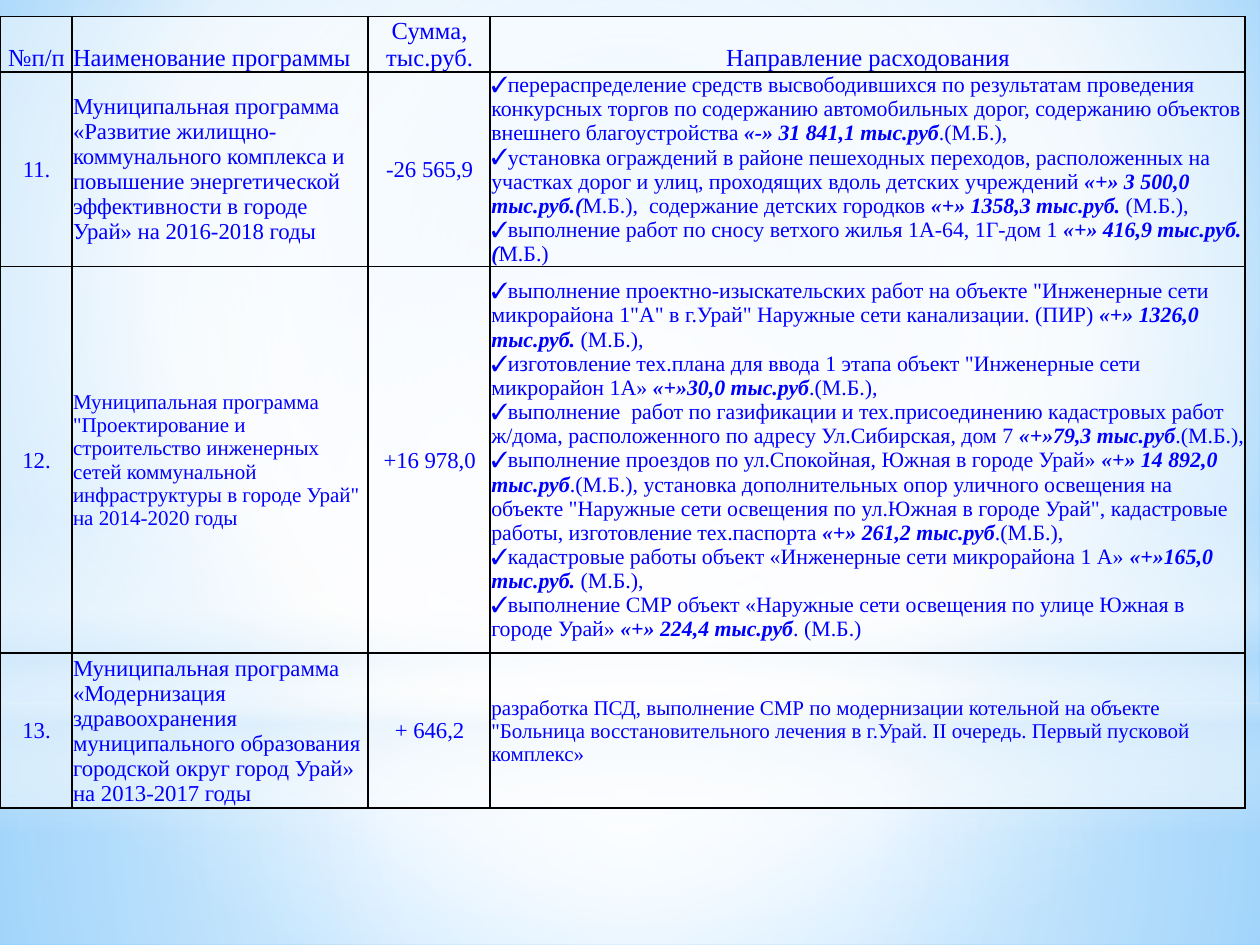
from pptx import Presentation
from pptx.dml.color import RGBColor
from pptx.enum.shapes import MSO_SHAPE as SHAPE
from pptx.enum.text import MSO_ANCHOR as ANCHOR, PP_ALIGN as ALIGN
from pptx.oxml import parse_xml
from pptx.oxml.ns import nsdecls, qn
from pptx.util import Inches, Pt

FONT, BLUE, BLACK, WHITE, SKY = "Times New Roman", "0000FF", "000000", "FFFFFF", "B4DCFA"
COLS = [0.57, 2.35, 0.97, 5.99]
ROWS = [0.44, 1.54, 3.07, 1.23]
HEADERS = ["№п/п", "Наименование программы", "Сумма, тыс.руб.", "Направление расходования"]

# number, name, name size, sum, directions (** marks bold italic), directions size, bulleted
PROGRAMS = [
    ("11.",
     "Муниципальная программа «Развитие жилищно-коммунального комплекса и повышение "
     "энергетической эффективности в городе Урай» на 2016-2018 годы", 13,
     "-26 565,9",
     ["перераспределение средств высвободившихся по результатам проведения конкурсных торгов "
      "по содержанию автомобильных дорог, содержанию объектов внешнего благоустройства "
      "**«-» 31 841,1 тыс.руб**.(М.Б.),",
      "установка ограждений в районе пешеходных переходов, расположенных на участках дорог "
      "и улиц, проходящих вдоль детских учреждений **«+» 3 500,0 тыс.руб.(**М.Б.),  "
      "содержание детских городков **«+» 1358,3 тыс.руб.** (М.Б.),",
      "выполнение работ по сносу ветхого жилья 1А-64, 1Г-дом 1 "
      "**«+» 416,9 тыс.руб.(**М.Б.)"], 12.5, True),
    ("12.",
     'Муниципальная программа "Проектирование и строительство инженерных сетей '
     'коммунальной инфраструктуры в городе Урай" на 2014-2020 годы', 12,
     "+16 978,0",
     ['выполнение проектно-изыскательских работ на объекте "Инженерные сети микрорайона '
      '1"А" в г.Урай" Наружные сети канализации. (ПИР) **«+» 1326,0 тыс.руб.** (М.Б.),',
      'изготовление тех.плана для ввода 1 этапа объект "Инженерные сети микрорайон 1А» '
      '**«+»30,0 тыс.руб**.(М.Б.),',
      "выполнение  работ по газификации и тех.присоединению кадастровых работ ж/дома, "
      "расположенного по адресу Ул.Сибирская, дом 7 **«+»79,3 тыс.руб**.(М.Б.),",
      "выполнение проездов по ул.Спокойная, Южная в городе Урай» **«+» 14 892,0 тыс.руб**"
      ".(М.Б.), установка дополнительных опор уличного освещения на объекте "
      '"Наружные сети освещения по ул.Южная в городе Урай", кадастровые работы, '
      "изготовление тех.паспорта **«+» 261,2 тыс.руб**.(М.Б.),",
      "кадастровые работы объект «Инженерные сети микрорайона 1 А» "
      "**«+»165,0 тыс.руб. **(М.Б.),",
      "выполнение СМР объект «Наружные сети освещения по улице Южная в городе Урай» "
      "**«+» 224,4 тыс.руб**. (М.Б.)"], 12.5, True),
    ("13.",
     "Муниципальная программа «Модернизация здравоохранения муниципального образования "
     "городской округ город Урай» на 2013-2017 годы", 13,
     "+ 646,2",
     ["разработка ПСД, выполнение СМР по модернизации котельной на объекте "
      '"Больница восстановительного лечения в г.Урай. II очередь. Первый пусковой комплекс»'],
     12, False),
]


def color_xml(color, alpha=100):
    return f'<a:srgbClr val="{color}"><a:alpha val="{alpha * 1000}"/></a:srgbClr>'


def set_gradient(props, stops, center=None):
    """Swap the solid fill in props for a radial gradient, or a vertical one without center."""
    gs = "".join(f'<a:gs pos="{pos * 1000}">{color_xml(*color)}</a:gs>' for pos, *color in stops)
    if center:
        rect = " ".join(f'{side}="{v * 1000}"' for side, v in zip("ltrb", center))
        way = f'<a:path path="circle"><a:fillToRect {rect}/></a:path>'
    else:
        way = '<a:lin ang="5400000" scaled="0"/>'
    grad = parse_xml(f'<a:gradFill {nsdecls("a")} rotWithShape="1">'
                     f'<a:gsLst>{gs}</a:gsLst>{way}</a:gradFill>')
    props.replace(props.find(qn("a:solidFill")), grad)


def add_glow(s, kind, box, stops, center=None):
    sp = s.shapes.add_shape(kind, *map(Inches, box))
    sp.shadow.inherit = False
    sp.line.fill.background()
    sp.fill.solid()
    set_gradient(sp.element.spPr, stops, center)


def add_backdrop(s, width, height):
    s.background.fill.solid()
    set_gradient(s.element.xpath(".//p:bgPr")[0],
                 [(0, "9ED5FF"), (60, WHITE), (100, "5BB9FF")], (20, 10, 20, 60))
    split, middle = 5.58, (50, 50, 50, 50)
    add_glow(s, SHAPE.RECTANGLE, (0, split, width, height - split),
             [(0, WHITE, 91), (37, WHITE, 76), (100, SKY, 79)], middle)
    add_glow(s, SHAPE.RECTANGLE, (0, 0, width, split),
             [(0, WHITE, 89), (48, WHITE, 62), (100, SKY, 79)], middle)
    add_glow(s, SHAPE.RECTANGLE, (0, 4.12, width, 2.5),
             [(0, WHITE, 0), (29, WHITE, 30), (45, SKY, 40), (55, WHITE, 26),
              (65, SKY, 60), (100, WHITE, 0)])
    add_glow(s, SHAPE.OVAL, (0, 1.75, width, split), [(0, WHITE), (56, WHITE, 0)], middle)


def style_cell(cell, anchor):
    cell.vertical_anchor = anchor
    cell.margin_left = cell.margin_top = Inches(0.01)
    cell.margin_right = cell.margin_bottom = 0
    tcPr = cell._tc.get_or_add_tcPr()
    for side in "LRTB":
        tcPr.append(parse_xml(f'<a:ln{side} {nsdecls("a")} w="{Pt(1)}"><a:solidFill>'
                              f'{color_xml(BLACK)}</a:solidFill></a:ln{side}>'))
    tcPr.append(parse_xml(f'<a:solidFill {nsdecls("a")}>{color_xml(WHITE, 46)}</a:solidFill>'))


def add_check_bullet(p):
    pPr = p._p.get_or_add_pPr()
    pPr.set("marL", "0")
    pPr.set("indent", "0")
    pPr.append(parse_xml(f'<a:buFont {nsdecls("a")} typeface="{FONT}"/>'))
    pPr.append(parse_xml(f'<a:buChar {nsdecls("a")} char="✓"/>'))


def write_cell(cell, texts, size, align=ALIGN.LEFT, anchor=ANCHOR.MIDDLE, bulleted=False):
    style_cell(cell, anchor)
    tf = cell.text_frame
    for i, text in enumerate(texts):
        p = tf.add_paragraph() if i else tf.paragraphs[0]
        p.alignment = align
        if bulleted:
            add_check_bullet(p)
        for k, part in enumerate(text.split("**")):
            if part:
                r = p.add_run()
                r.text = part
                r.font.name, r.font.size = FONT, Pt(size)
                r.font.color.rgb = RGBColor.from_string(BLUE)
                r.font.bold = r.font.italic = k % 2 == 1


def add_program_table(s, left, top):
    frame = s.shapes.add_table(len(ROWS), len(COLS), Inches(left), Inches(top),
                               Inches(sum(COLS)), Inches(sum(ROWS)))
    table = frame.table
    table.first_row = table.horz_banding = False
    for col, width in zip(table.columns, COLS):
        col.width = Inches(width)
    for row, height in zip(table.rows, ROWS):
        row.height = Inches(height)
    for c, header in enumerate(HEADERS):
        align = ALIGN.LEFT if c == 1 else ALIGN.CENTER
        write_cell(table.cell(0, c), [header], 14, align, ANCHOR.BOTTOM)
    for i, (number, name, name_size, total, uses, use_size, bulleted) in enumerate(PROGRAMS, 1):
        write_cell(table.cell(i, 0), [number], 13, ALIGN.CENTER)
        write_cell(table.cell(i, 1), [name], name_size)
        write_cell(table.cell(i, 2), [total], 13, ALIGN.CENTER)
        write_cell(table.cell(i, 3), uses, use_size, bulleted=bulleted)


def main():
    prs = Presentation()
    prs.slide_width, prs.slide_height = Inches(10), Inches(7.5)
    s = prs.slides.add_slide(prs.slide_layouts[6])
    add_backdrop(s, 10, 7.5)
    add_program_table(s, 0, 0.13)
    prs.save("out.pptx")


if __name__ == "__main__":
    main()
